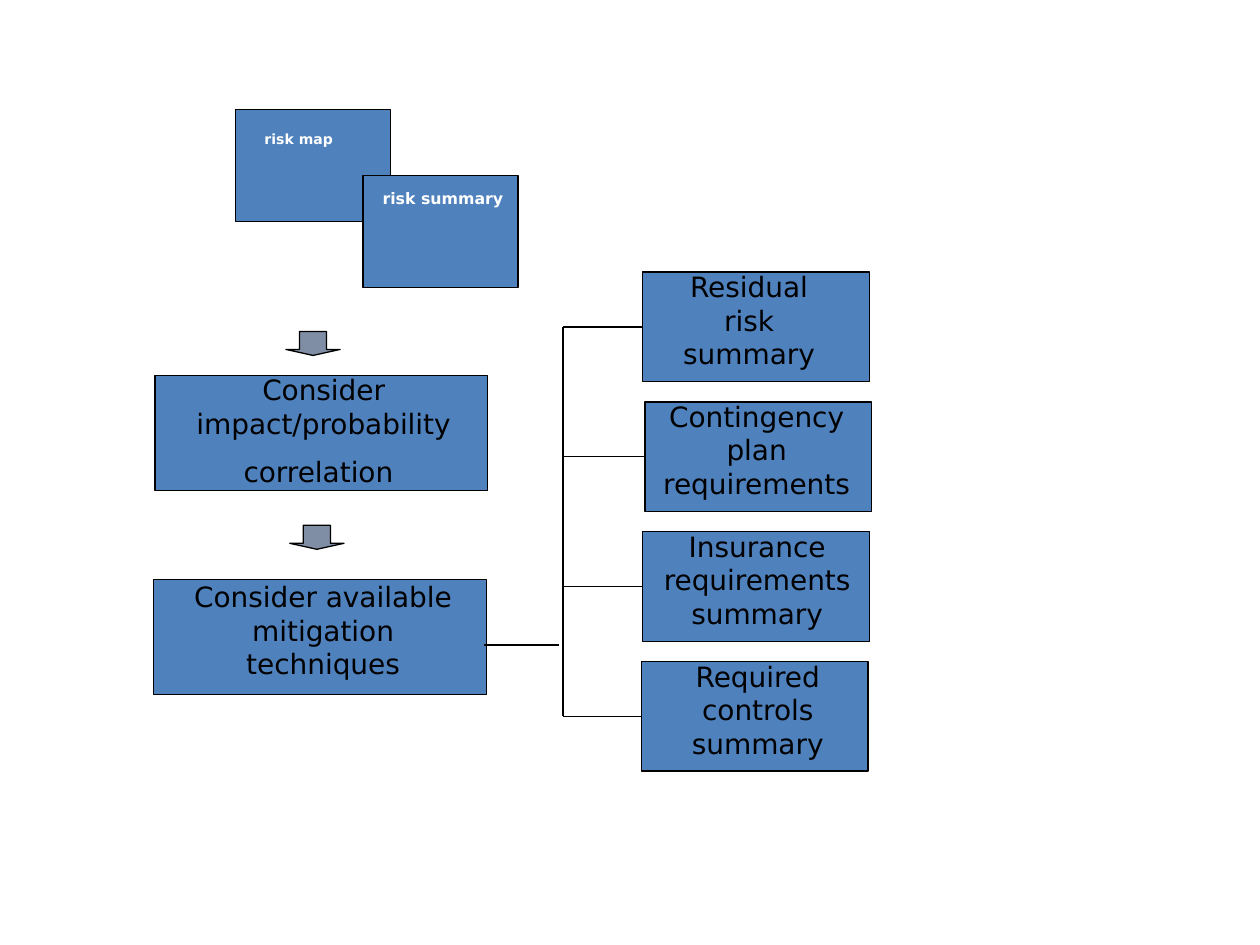
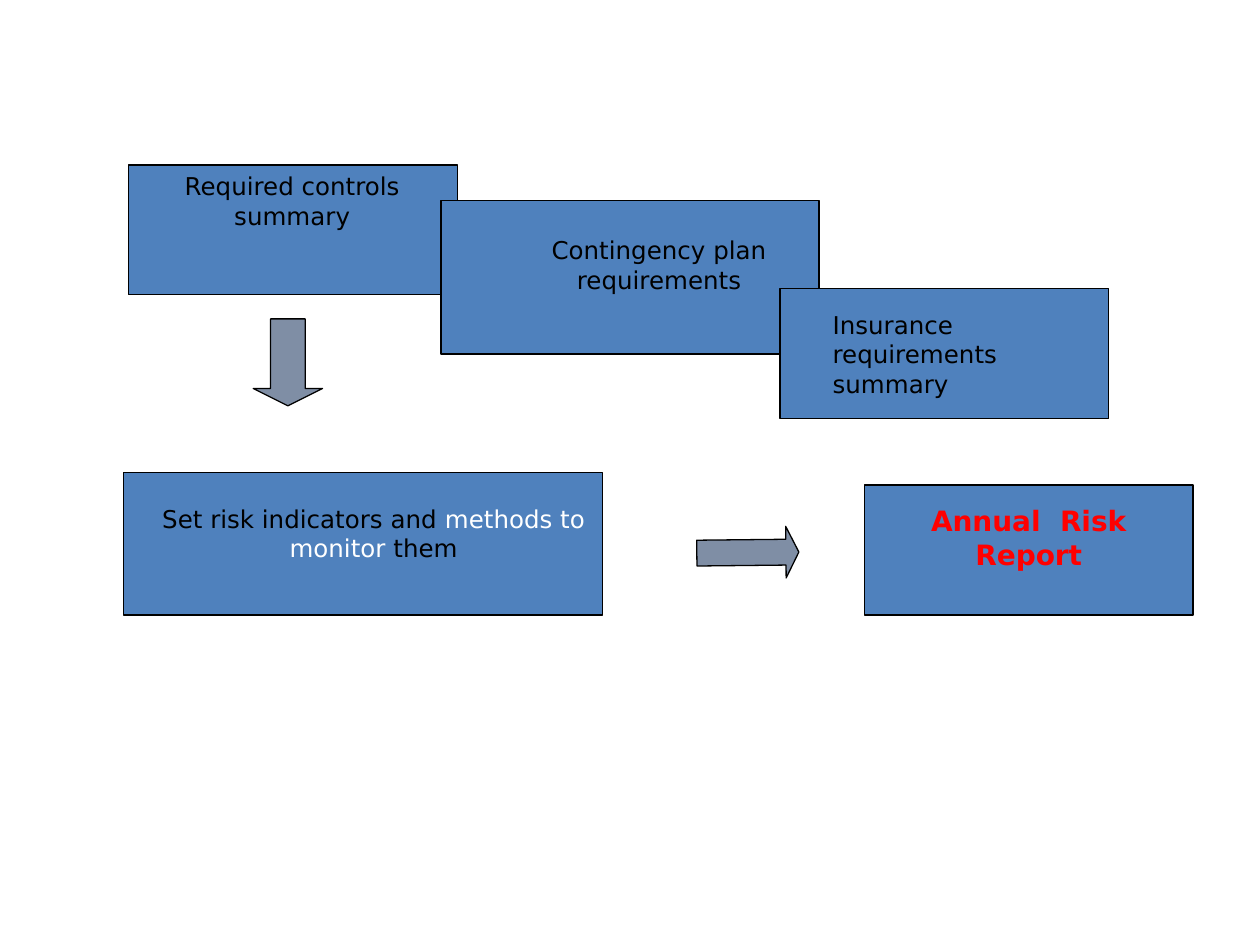
"""Build two risk management flow slides."""
from lxml import etree
from pptx import Presentation
from pptx.dml.color import RGBColor
from pptx.enum import shapes, text
from pptx.oxml import ns
from pptx.util import Pt

BLUE = RGBColor(0x4F, 0x81, 0xBD)
GREY = RGBColor(0x7F, 0x8E, 0xA5)
BLACK = RGBColor(0, 0, 0)
WHITE = RGBColor(255, 255, 255)
RED = RGBColor(255, 0, 0)
RECT = shapes.MSO_SHAPE.RECTANGLE
DOWN = shapes.MSO_SHAPE.DOWN_ARROW
CENTER, LEFT = text.PP_ALIGN.CENTER, text.PP_ALIGN.LEFT


class Deck:
    """Hold the shared style and the current slide."""

    font = "DejaVu Sans"
    line_width = Pt(0.75)

    def __init__(self):
        self.prs = Presentation()
        self.prs.slide_width, self.prs.slide_height = Pt(720), Pt(540)

    def new_slide(self):
        self.s = self.prs.slides.add_slide(self.prs.slide_layouts[6])

    def outline(self, sp):
        sp.line.color.rgb = BLACK
        sp.line.width = self.line_width

    def shape(self, kind, color, x, y, w, h):
        sp = self.s.shapes.add_shape(kind, Pt(x), Pt(y), Pt(w), Pt(h))
        sp.shadow.inherit = False
        sp.fill.solid()
        sp.fill.fore_color.rgb = color
        self.outline(sp)
        return sp

    def box(self, x, y, w, h):
        return self.shape(RECT, BLUE, x, y, w, h)

    def arrow(self, x, y, w, h, rotation=0):
        sp = self.shape(DOWN, GREY, x, y, w, h)
        sp.adjustments[0], sp.adjustments[1] = 0.5, 0.25
        sp.rotation = rotation

    def label(self, x, y, w, h, words, size=16, color=BLACK, bold=False, align=CENTER):
        tf = self.s.shapes.add_textbox(Pt(x), Pt(y), Pt(w), Pt(h)).text_frame
        tf.word_wrap = True
        p = tf.paragraphs[0]
        p.alignment = align
        self.run(p, words, size, color, bold)
        return p

    def run(self, p, words, size, color=BLACK, bold=False, font=None):
        r = p.add_run()
        r.text = words
        r.font.name = font or self.font
        r.font.size = Pt(size)
        r.font.bold = bold
        r.font.color.rgb = color

    def line(self, x1, y1, x2, y2, begin=None):
        sp = self.s.shapes.add_connector(
            shapes.MSO_CONNECTOR.STRAIGHT, Pt(x1), Pt(y1), Pt(x2), Pt(y2))
        self.outline(sp)
        etree.SubElement(sp._element.spPr, ns.qn("a:effectLst"))
        if begin is not None:
            sp.begin_connect(begin, 1)


def mitigation_slide(deck):
    deck.new_slide()
    deck.box(134.6, 62.6, 88.6, 64.1)
    deck.label(139, 71.3, 63.4, 17.3, "risk map", 8, WHITE, True)
    deck.box(207.4, 100.1, 88.6, 64.1)
    deck.label(202.3, 104.4, 101.5, 18, "risk summary", 9, WHITE, True)

    deck.arrow(163.4, 189.4, 31, 13.7)
    deck.box(88.6, 214.6, 190.1, 65.5)
    p = deck.label(90.7, 209.5, 188.6, 61.2, "Consider impact/probability correlation")
    deck.run(p, " ", 24, font="Times New Roman")
    deck.arrow(165.6, 300.2, 31, 13.7)
    deck.box(87.8, 331.2, 190.1, 65.5)
    deck.label(90.7, 327.6, 187.9, 61.2, "Consider available mitigation techniques")

    top, pitch, height, spine = 155.5, 74.2, 62.6, 321.8
    results = [
        (367.2, 374.4, 107.3, "Residual risk summary"),
        (368.6, 359.3, 146.2, "Contingency plan requirements"),
        (367.2, 364.3, 136.8, "Insurance requirements summary"),
        (366.5, 379.4, 107.3, "Required controls summary"),
    ]
    for i, (x, label_x, label_w, words) in enumerate(results):
        y = top + i * pitch
        middle = y + height / 2
        sp = deck.box(x, y, 129.6, height)
        deck.label(label_x, y - 5, label_w, 53, words)
        deck.line(x, middle, spine, middle, sp)
    first = top + height / 2
    deck.line(spine, first, spine, first + 3 * pitch)
    deck.line(276.5, 368.6, 319.7, 368.6)


def report_slide(deck):
    deck.new_slide()
    deck.box(73.4, 94.3, 187.9, 74.2)
    deck.label(73.4, 94.3, 187.2, 41, "Required controls summary", 14)
    deck.box(252, 114.5, 216, 87.8)
    deck.label(269.3, 131, 214.6, 41, "Contingency plan requirements", 14)
    deck.box(445.7, 164.9, 187.9, 74.2)
    deck.label(468.7, 173.5, 164.9, 58.3, "Insurance requirements summary", 14, align=LEFT)

    deck.arrow(144.7, 182.2, 39.6, 49.7)
    deck.box(70.6, 270, 273.6, 81.4)
    p = deck.label(82.1, 284.4, 262.8, 41, "Set risk indicators and ", 14)
    deck.run(p, "methods to monitor", 14, WHITE)
    deck.run(p, " them", 14)
    deck.arrow(412.6, 286.6, 29.5, 58.3, 269.4)
    deck.box(493.9, 277.2, 187.9, 74.2)
    deck.label(493.9, 284.4, 187.9, 46, "Annual  Risk Report", 16, RED, True)


def main():
    deck = Deck()
    mitigation_slide(deck)
    report_slide(deck)
    deck.prs.save("out.pptx")


if __name__ == "__main__":
    main()
